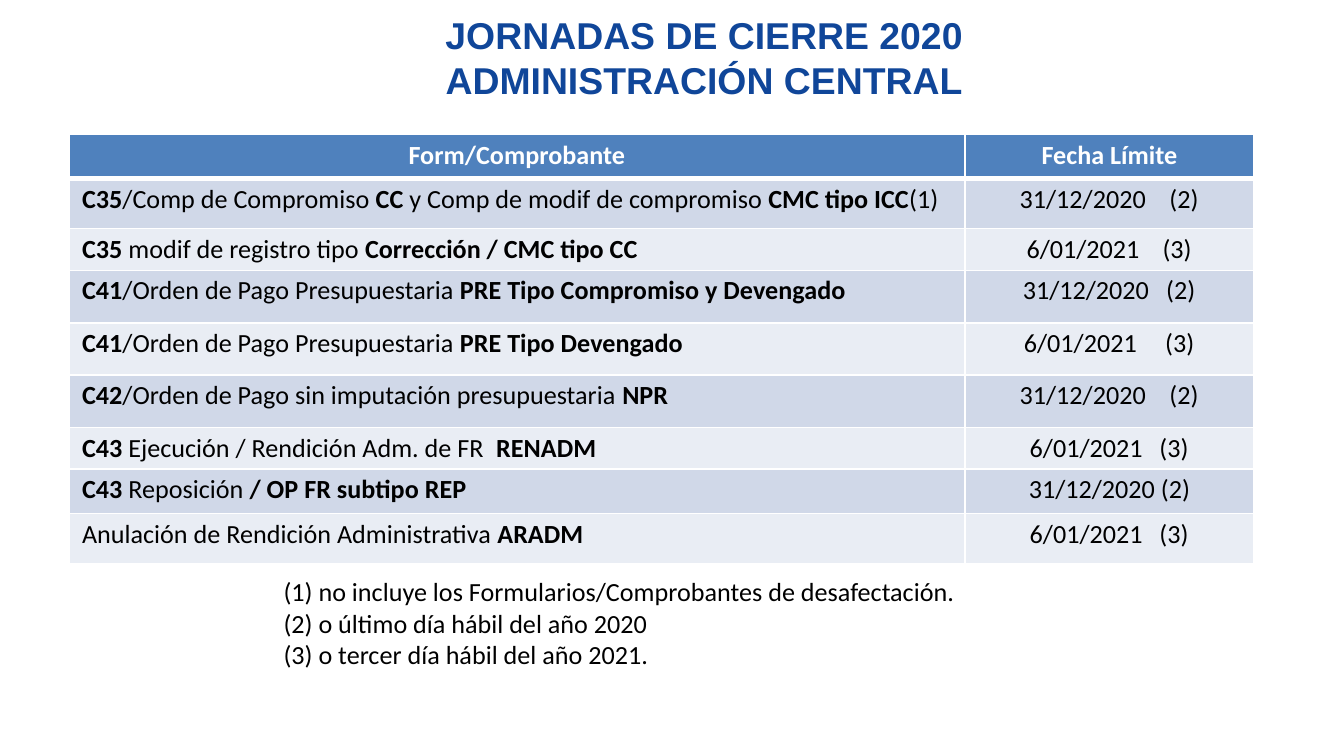
from lxml.etree import SubElement
from pptx import Presentation
from pptx.dml.color import RGBColor
from pptx.enum.text import MSO_ANCHOR, MSO_AUTO_SIZE, PP_ALIGN
from pptx.oxml.ns import qn
from pptx.util import Cm, Pt


def write(frame, text, size=14, font="Calibri", color="000000",
          align=PP_ALIGN.LEFT, tab=None):
    """Write one paragraph per line; stars switch bold on and off."""
    for row, line in enumerate(text.split("\n")):
        para = frame.add_paragraph() if row else frame.paragraphs[0]
        para.alignment = align
        if tab:
            stops = SubElement(para._p.get_or_add_pPr(), qn("a:tabLst"))
            SubElement(stops, qn("a:tab"), pos=str(tab), algn="l")
        for part, words in enumerate(line.split("*")):
            if words:
                run = para.add_run()
                run.text = words
                run.font.size = Pt(size)
                run.font.name = font
                run.font.bold = part % 2 == 1
                run.font.color.rgb = RGBColor.from_string(color)


def style(cell, fill, base=1):
    """Set white borders, margins and fill; base is the bottom line in points."""
    props = cell._tc.get_or_add_tcPr()
    for side, width in (("L", 1), ("R", 1), ("T", 1), ("B", base)):
        line = SubElement(props, qn("a:ln" + side), w=str(Pt(width)))
        paint = SubElement(line, qn("a:solidFill"))
        SubElement(paint, qn("a:srgbClr"), val="FFFFFF")
    cell.fill.solid()
    cell.fill.fore_color.rgb = RGBColor.from_string(fill)
    cell.margin_left = cell.margin_right = Cm(0.25)
    cell.margin_top = cell.margin_bottom = Cm(0.09)


deck = Presentation()
deck.slide_width, deck.slide_height = Cm(25.4), Cm(14.29)
slide = deck.slides.add_slide(deck.slide_layouts[6])
shapes = slide.shapes

# Title
title = shapes.add_textbox(Cm(3.71), Cm(0.18), Cm(19.2), Cm(1.8)).text_frame
title.word_wrap = True
title.vertical_anchor = MSO_ANCHOR.MIDDLE
write(title, "*JORNADAS DE CIERRE 2020*\n*ADMINISTRACIÓN CENTRAL*",
      size=20, font="Arial", color="104699", align=PP_ALIGN.CENTER)

# Footnotes
notes = shapes.add_textbox(Cm(5.11), Cm(10.74), Cm(16.4), Cm(2.06)).text_frame
notes.word_wrap = True
notes.auto_size = MSO_AUTO_SIZE.SHAPE_TO_FIT_TEXT
notes.vertical_anchor = MSO_ANCHOR.MIDDLE
write(notes, "(1) no incluye los Formularios/Comprobantes de desafectación.\n"
      "(2) o último día hábil del año 2020\n"
      "(3) o tercer día hábil del año 2021.", align=PP_ALIGN.JUSTIFY)

# Deadlines: row height, form, date, note, indent of the date
rows = [
    (0.94, "*C35*/Comp de Compromiso *CC* y Comp de modif de compromiso "
     "*CMC tipo ICC*(1)", "31/12/2020", "(2)", 0.78),
    (0.79, "*C35 *modif de registro tipo *Corrección / CMC tipo CC*",
     "6/01/2021", "(3)", 0.91),
    (0.99, "*C41*/Orden de Pago Presupuestaria *PRE Tipo Compromiso y Devengado*",
     "31/12/2020", "(2)", 0.84),
    (0.99, "*C41*/Orden de Pago Presupuestaria *PRE Tipo Devengado*",
     "6/01/2021", "(3)", 0.86),
    (0.99, "*C42*/Orden de Pago sin imputación presupuestaria *NPR*",
     "31/12/2020", "(2)", 0.78),
    (0.79, "*C43* Ejecución / Rendición Adm. de FR  *RENADM*",
     "6/01/2021", "(3)", 0.97),
    (0.84, "*C43 *Reposición* / OP FR subtipo REP*", "31/12/2020", "(2)", None),
    (0.94, "Anulación de Rendición Administrativa *ARADM*",
     "6/01/2021", "(3)", 0.97),
]
table = shapes.add_table(len(rows) + 1, 2, Cm(1.3), Cm(2.54),
                         Cm(22.4), Cm(8.11)).table
table.columns[0].width, table.columns[1].width = Cm(16.94), Cm(5.46)

table.rows[0].height = Cm(0.84)
for cell, head in zip(table.rows[0].cells, ("Form/Comprobante", "Fecha Límite")):
    style(cell, "4F81BD", base=3)
    write(cell.text_frame, f"*{head}*", color="FFFFFF", align=PP_ALIGN.CENTER)

for num, (height, form, date, note, indent) in enumerate(rows, 1):
    table.rows[num].height = Cm(height)
    left, right = table.rows[num].cells
    for cell in (left, right):
        style(cell, "D0D8E8" if num % 2 else "E9EDF4")
    write(left.text_frame, form)
    if indent:
        # Date and note stay symmetric about the middle of the column
        right.margin_left = Cm(0.25 + indent)
        write(right.text_frame, f"{date}\t{note}", tab=Cm(4.39 - 2 * indent))
    else:
        write(right.text_frame, f"{date} {note}", align=PP_ALIGN.CENTER)

deck.save("out.pptx")
